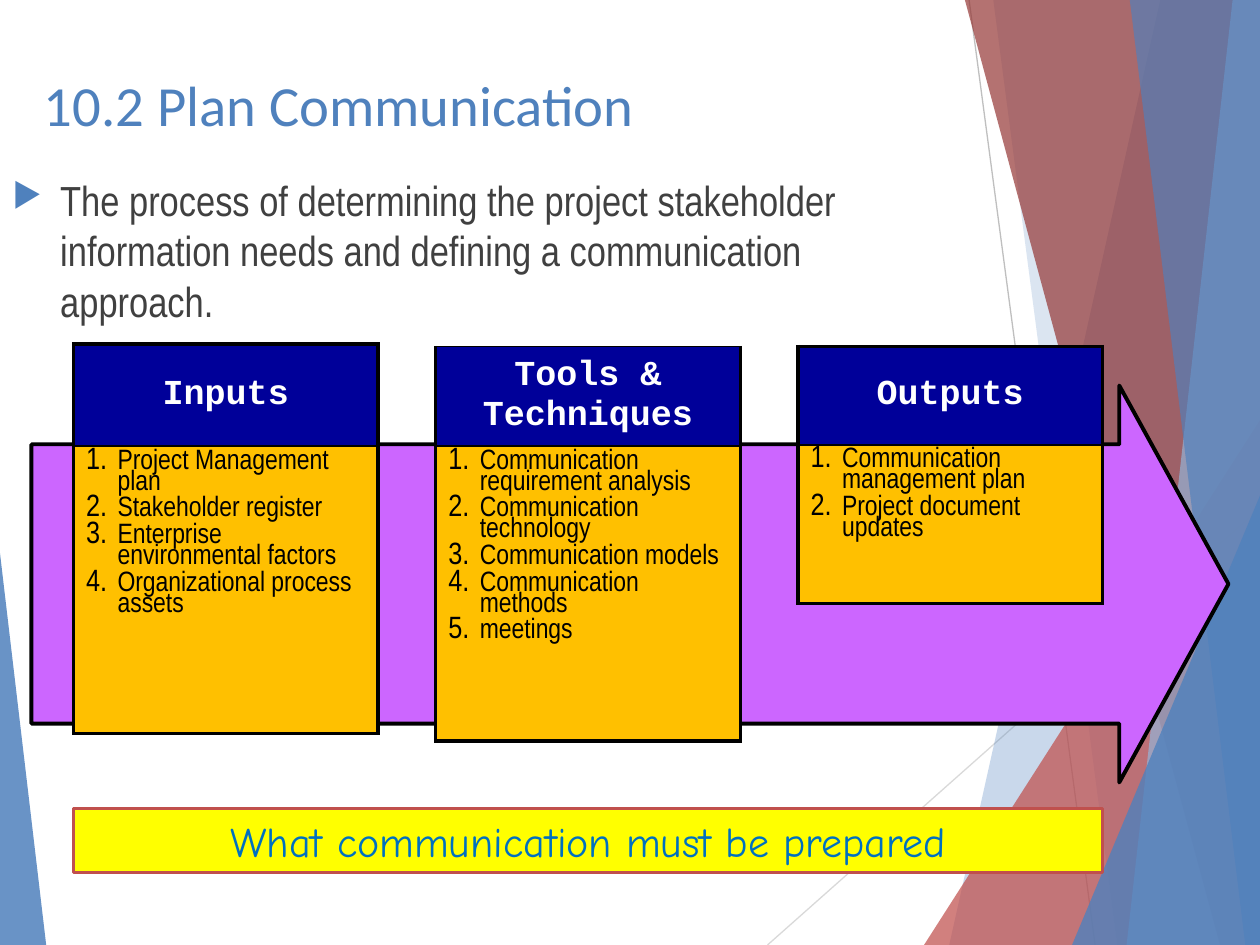
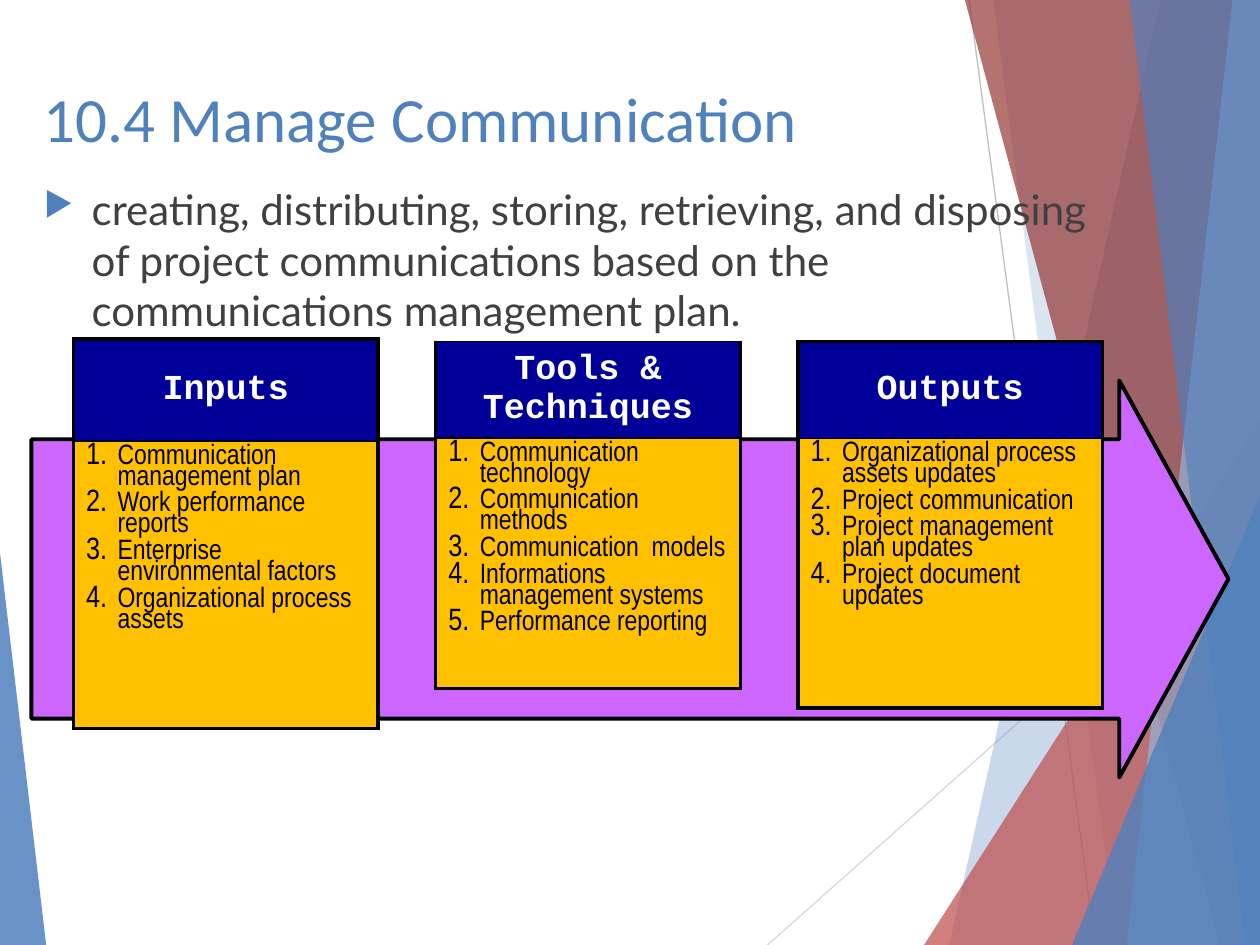
from dataclasses import dataclass

from lxml.etree import SubElement as Sub
from pptx import Presentation
from pptx.dml.color import RGBColor as Rgb
from pptx.enum.shapes import MSO_CONNECTOR as Link, MSO_SHAPE as Form
from pptx.enum.text import MSO_ANCHOR as Anchor, PP_ALIGN as Align
from pptx.oxml.ns import qn
from pptx.util import Inches, Pt

COLS, ROWS = 120, 90


@dataclass(frozen=True)
class Theme:
    # Colours
    blue: str = "4F81BD"
    pale: str = "95B3D7"
    red: str = "C0504D"
    wine: str = "953735"
    gray: str = "BFBFBF"
    mist: str = "D9D9D9"
    ink: str = "404040"
    black: str = "000000"
    white: str = "FFFFFF"
    navy: str = "000099"
    gold: str = "FFC000"
    pink: str = "CC66FF"
    lemon: str = "FFFF00"
    sea: str = "0070C0"
    # Fonts
    plain: str = "Calibri"
    slim: str = "Arial Narrow"
    mono: str = "Courier New"
    hand: str = "Comic Neue"
    # Type sizes and line widths
    lead: float = 24
    head: float = 20
    item: float = 16
    bold: float = 2.25
    thin: float = 1
    hair: float = 0.75


def write(frame, text, font, size, color, bold=False, align=Align.LEFT,
          space=0, pitch=1.0, indent=0, mark=None, scale=100, tint=None):
    """Fill a text frame, one paragraph for each string."""
    lines = [text] if isinstance(text, str) else text
    for i, line in enumerate(lines):
        para = frame.paragraphs[0] if i == 0 else frame.add_paragraph()
        para.alignment = align
        para.space_before = Pt(space)
        para.line_spacing = pitch
        run = para.add_run()
        run.text = line
        run.font.name, run.font.size, run.font.bold = font, Pt(size), bold
        run.font.color.rgb = Rgb.from_string(color)
        if mark:
            props = para._p.get_or_add_pPr()
            props.set("marL", str(Inches(indent)))
            props.set("indent", str(-Inches(indent)))
            if tint:
                Sub(Sub(props, qn("a:buClr")), qn("a:srgbClr"), val=tint)
            Sub(props, qn("a:buSzPct"), val=str(scale * 1000))
            if mark == "1.":
                Sub(props, qn("a:buAutoNum"), type="arabicPeriod")
            else:
                Sub(props, qn("a:buChar"), char=mark)


class Deck:
    """Holds the style and the current slide; lengths are grid units."""

    def __init__(self, theme):
        self.theme = theme
        self.show = Presentation()
        self.show.slide_width, self.show.slide_height = Inches(10), Inches(7.5)
        self.slide = None

    def col(self, n):
        return round(self.show.slide_width * n / COLS)

    def row(self, n):
        return round(self.show.slide_height * n / ROWS)

    def box(self, x, y, w, h):
        return self.col(x), self.row(y), self.col(w), self.row(h)

    def page(self):
        self.slide = self.show.slides.add_slide(self.show.slide_layouts[6])
        self.back()

    def paint(self, shape, fill, alpha=100, line=None, width=1):
        shape.shadow.inherit = False
        shape.fill.solid()
        shape.fill.fore_color.rgb = Rgb.from_string(fill)
        if alpha < 100:
            tone = shape.element.spPr.find(qn("a:solidFill"))[0]
            Sub(tone, qn("a:alpha"), val=str(alpha * 1000))
        if line:
            shape.line.color.rgb = Rgb.from_string(line)
            shape.line.width = Pt(width)
        else:
            shape.line.fill.background()

    def shape(self, form, area, fill, tweaks=(), **look):
        item = self.slide.shapes.add_shape(form, *self.box(*area))
        for i, tweak in enumerate(tweaks):
            item.adjustments[i] = tweak
        self.paint(item, fill, **look)
        return item

    def rule(self, x1, y1, x2, y2, color):
        line = self.slide.shapes.add_connector(
            Link.STRAIGHT, self.col(x1), self.row(y1), self.col(x2), self.row(y2))
        line.line.color.rgb = Rgb.from_string(color)
        line.line.width = Pt(self.theme.hair)
        Sub(line.element.spPr, qn("a:effectLst"))

    def facet(self, top, foot, color, alpha):
        """Band from a slanted left edge to the right side of the slide."""
        pen = self.slide.shapes.build_freeform(self.col(top), 0, scale=1.0)
        pen.add_line_segments([(self.col(x), self.row(y)) for x, y in
                               ((COLS, 0), (COLS, ROWS), (foot, ROWS))])
        self.paint(pen.convert_to_shape(), color, alpha)

    def wedge(self, x, y, w, peak, color, alpha):
        """Right-angled triangle that stands on the slide's bottom edge."""
        self.shape(Form.ISOSCELES_TRIANGLE, (x, y, w, ROWS - y), color,
                   [peak], alpha=alpha)

    def back(self):
        t = self.theme
        self.rule(92.3, 0, 104.3, ROWS, t.gray)
        self.rule(COLS, 48.4, 73.1, ROWS, t.mist)
        self.facet(110.5, 90.4, t.blue, 30)
        self.facet(94.6, 106.4, t.blue, 20)
        self.wedge(88, 40, 32, 1, t.red, 72)
        self.facet(91.9, 116.2, t.wine, 70)
        self.facet(117.4, 107.3, t.pale, 70)
        self.facet(107.6, 118.6, t.blue, 65)
        self.wedge(102.1, 47.2, 17.9, 1, t.blue, 80)
        self.wedge(0, 52.7, 4.4, 0, t.blue, 85)

    def text(self, area, words, **form):
        frame = self.slide.shapes.add_textbox(*self.box(*area)).text_frame
        frame.word_wrap = True
        write(frame, words, **form)

    def title(self, y, words, size):
        t = self.theme
        self.text((3, y, 100, 6), words, font=t.plain, size=size, color=t.blue)

    def lead(self, area, words, font):
        t = self.theme
        self.text(area, words, font=font, size=t.lead, color=t.ink, space=10,
                  indent=0.38, mark="▶", scale=80, tint=t.blue)

    def edge(self, cell, **widths):
        """Cell borders in schema order, ahead of the fill."""
        props = cell._tc.get_or_add_tcPr()
        for i, side in enumerate("LRTB"):
            line = Sub(props, qn("a:ln" + side), w=str(Pt(widths[side])))
            Sub(Sub(line, qn("a:solidFill")), qn("a:srgbClr"),
                val=self.theme.black)
            props.insert(i, line)

    def panel(self, x, y, head, items, sizes, rim):
        t = self.theme
        table = self.slide.shapes.add_table(
            2, 1, *self.box(x, y, 29, sum(sizes))).table
        table.first_row = table.horz_banding = False
        for line, size in zip(table.rows, sizes):
            line.height = self.row(size)
        top, body = table.cell(0, 0), table.cell(1, 0)
        for cell, fill in ((top, t.navy), (body, t.gold)):
            cell.fill.solid()
            cell.fill.fore_color.rgb = Rgb.from_string(fill)
        self.edge(top, L=t.bold, R=t.bold, T=rim, B=t.thin)
        self.edge(body, L=t.bold, R=t.bold, T=t.thin, B=t.bold)
        top.vertical_anchor = Anchor.MIDDLE
        write(top.text_frame, head, font=t.mono, size=t.head, color=t.white,
              bold=True, align=Align.CENTER, space=t.head / 5)
        write(body.text_frame, items, font=t.slim, size=t.item, color=t.black,
              space=t.item / 5, pitch=0.8, indent=0.25, mark="1.", scale=110)

    def flow(self, y, lists, sizes):
        """Wide arrow with the three process panels on it."""
        t = self.theme
        self.shape(Form.RIGHT_ARROW, (3, y, 114, 37.8), t.pink, (0.704, 0.275),
                   line=t.black, width=t.bold)
        heads = "Inputs", "Tools & Techniques", "Outputs"
        lifts = 3.96, 3.72, 3.72
        rims = t.bold, t.thin, t.bold
        for i, part in enumerate(zip(heads, lists, sizes, rims)):
            self.panel(7 + 34.5 * i, y - lifts[i], *part)

    def banner(self, words):
        t = self.theme
        bar = self.shape(Form.RECTANGLE, (7, 77, 98, 6.1), t.lemon,
                         line=t.red, width=1.5)
        write(bar.text_frame, words, font=t.hand, size=t.lead, color=t.sea,
              align=Align.CENTER)


def main():
    theme = Theme()
    deck = Deck(theme)

    # Plan communication
    deck.page()
    deck.title(6.1, "10.2 Plan Communication", 32.4)
    deck.lead((0, 16, 92.6, 15),
              "The process of determining the project stakeholder information "
              "needs and defining a communication approach.", theme.slim)
    deck.flow(36.72, (
        ["Project Management plan", "Stakeholder register",
         "Enterprise environmental factors", "Organizational process assets"],
        ["Communication requirement analysis", "Communication technology",
         "Communication models", "Communication methods", "meetings"],
        ["Communication management plan", "Project document updates"],
    ), ((9.72, 27.36), (9.48, 28.08), (9.36, 15.12)))
    deck.banner("What communication must be prepared")

    # Manage communication
    deck.page()
    deck.title(7, "10.4 Manage Communication", 36)
    deck.lead((3, 16.9, 103, 14.6),
              "creating, distributing, storing, retrieving, and disposing of "
              "project communications based on the communications management "
              "plan.", "Lato")
    deck.flow(36.24, (
        ["Communication management plan", "Work performance reports",
         "Enterprise environmental factors", "Organizational process assets"],
        ["Communication technology", "Communication methods",
         "Communication  models", "Informations management systems",
         "Performance reporting"],
        ["Organizational process assets updates", "Project communication",
         "Project management plan updates", "Project document updates"],
    ), ((9.72, 27.36), (8.76, 23.4), (9.24, 25.68)))

    deck.show.save("out.pptx")


if __name__ == "__main__":
    main()
